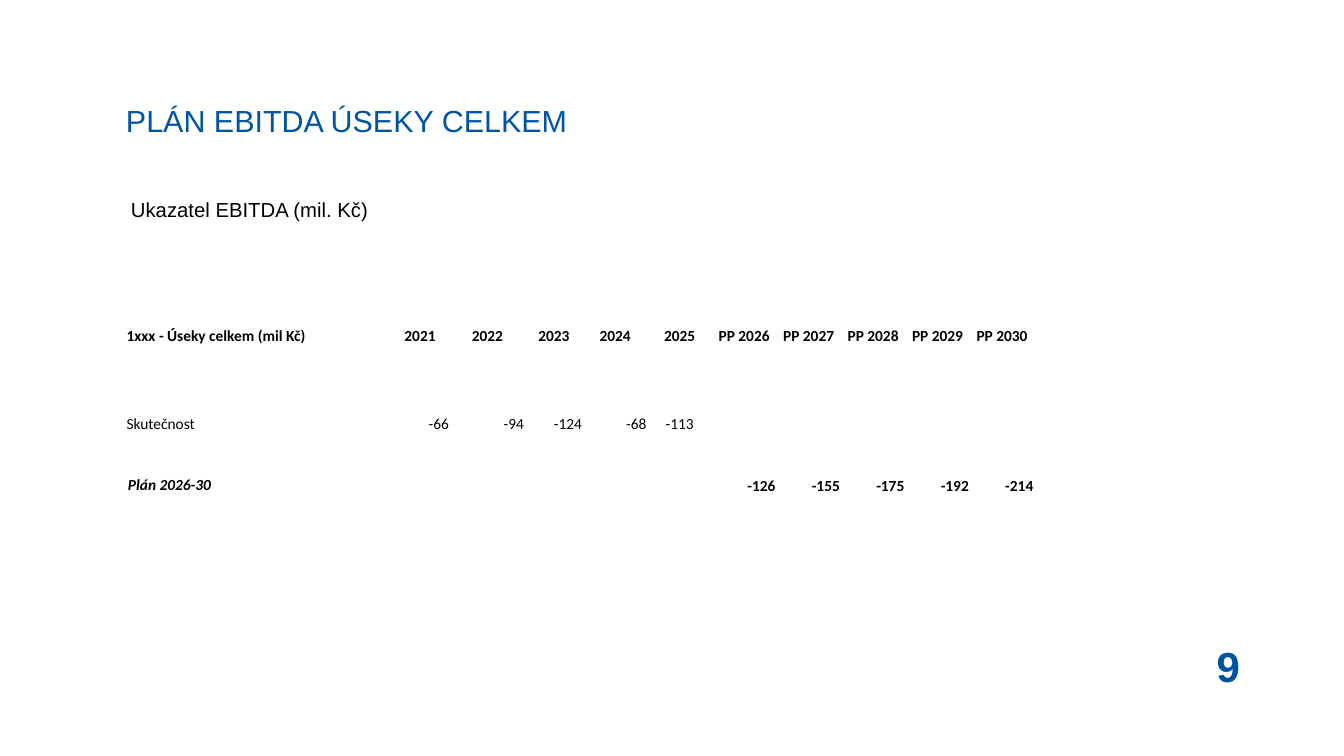
"""Builds the slide with the EBITDA plan for all divisions."""
from pptx import Presentation
from pptx import util as u
from pptx.dml.color import RGBColor
from pptx.enum import text

YEARS = ["2021", "2022", "2023", "2024", "2025",
         "PP 2026", "PP 2027", "PP 2028", "PP 2029", "PP 2030"]
ACTUALS = ["-66", "-94", "-124", "-68", "-113"]
PLAN = ["-126", "-155", "-175", "-192", "-214"]
COLUMN_WIDTHS = [13.31, 3.02, 3.78, 2.92] + [3.25] * 7
ROW_HEIGHTS = [5.82, 3.08, 3.08]
LEFT, CENTER, RIGHT = text.PP_ALIGN.LEFT, text.PP_ALIGN.CENTER, text.PP_ALIGN.RIGHT


def style(paragraph, size, color="000000", name="Arial", bold=False, italic=False):
    """Format every run of a paragraph."""
    for run in paragraph.runs:
        font = run.font
        font.name, font.size = name, u.Pt(size)
        font.bold, font.italic = bold, italic
        font.color.rgb = RGBColor.from_string(color)


def place(shape, left, top, width, height):
    """Position a shape in centimetres."""
    shape.left, shape.top = u.Cm(left), u.Cm(top)
    shape.width, shape.height = u.Cm(width), u.Cm(height)


def add_title(slide, wording):
    """Fill and format the title placeholder."""
    title = slide.shapes.title
    place(title, 6.35, 4.06, 46.51, 3.99)
    frame = title.text_frame
    frame.text = wording
    frame.vertical_anchor = text.MSO_ANCHOR.MIDDLE
    frame.margin_left = frame.margin_right = frame.margin_top = frame.margin_bottom = 0
    frame.paragraphs[0].alignment = LEFT
    style(frame.paragraphs[0], 43.5, "0054A4")


def add_label(slide, wording, box, size, color="000000", bold=False, align=LEFT):
    """Add a one-line text box."""
    frame = slide.shapes.add_textbox(*map(u.Cm, box)).text_frame
    frame.word_wrap = True
    frame.text = wording
    frame.paragraphs[0].alignment = align
    style(frame.paragraphs[0], size, color, bold=bold)


def fill_cell(cell, wording, align, bold, italic):
    """Write one table cell without a fill."""
    cell.fill.background()
    cell.vertical_anchor = text.MSO_ANCHOR.MIDDLE
    margin = u.Cm(0.05 if align == RIGHT else 0.03)
    cell.margin_left = cell.margin_right = cell.margin_top = margin
    cell.margin_bottom = 0
    paragraph = cell.text_frame.paragraphs[0]
    paragraph.text = wording
    paragraph.alignment = align
    style(paragraph, 22, name="Calibri", bold=bold, italic=italic)


def add_ebitda_table(slide):
    """Add the table of actual and planned EBITDA."""
    rows = [["1xxx - Úseky celkem (mil Kč)"] + YEARS,
            ["Skutečnost"] + ACTUALS + [""] * len(PLAN),
            ["Plán 2026-30"] + [""] * len(ACTUALS) + PLAN]
    table = slide.shapes.add_table(
        len(rows), len(COLUMN_WIDTHS), u.Cm(6.35), u.Cm(14.02),
        u.Cm(sum(COLUMN_WIDTHS)), u.Cm(sum(ROW_HEIGHTS))).table
    table.first_row = table.horz_banding = False
    for column, width in zip(table.columns, COLUMN_WIDTHS):
        column.width = u.Cm(width)
    for row, height in zip(table.rows, ROW_HEIGHTS):
        row.height = u.Cm(height)
    for r, values in enumerate(rows):
        for c, value in enumerate(values):
            centered = r == 0 or (r, c) == (1, len(ACTUALS))
            align = LEFT if c == 0 else CENTER if centered else RIGHT
            fill_cell(table.cell(r, c), value, align, r != 1, (r, c) == (2, 0))
    plan_cell = table.cell(2, 0)
    plan_cell.margin_left = u.Cm(0.1)
    plan_cell.text_frame.paragraphs[0].space_before = u.Pt(0)


def main():
    """Build and save the presentation."""
    presentation = Presentation()
    presentation.slide_width, presentation.slide_height = u.Cm(67.74), u.Cm(38.1)
    slide = presentation.slides.add_slide(presentation.slide_layouts[5])
    add_title(slide, "PLÁN EBITDA ÚSEKY CELKEM")
    add_label(slide, "9", (59.31, 32.13, 5.21, 2.41), 60, "0053A0", True, CENTER)
    add_label(slide, "Ukazatel EBITDA (mil. Kč)", (6.35, 9.8, 38.81, 1.5), 29)
    add_ebitda_table(slide)
    presentation.save("out.pptx")


if __name__ == "__main__":
    main()
